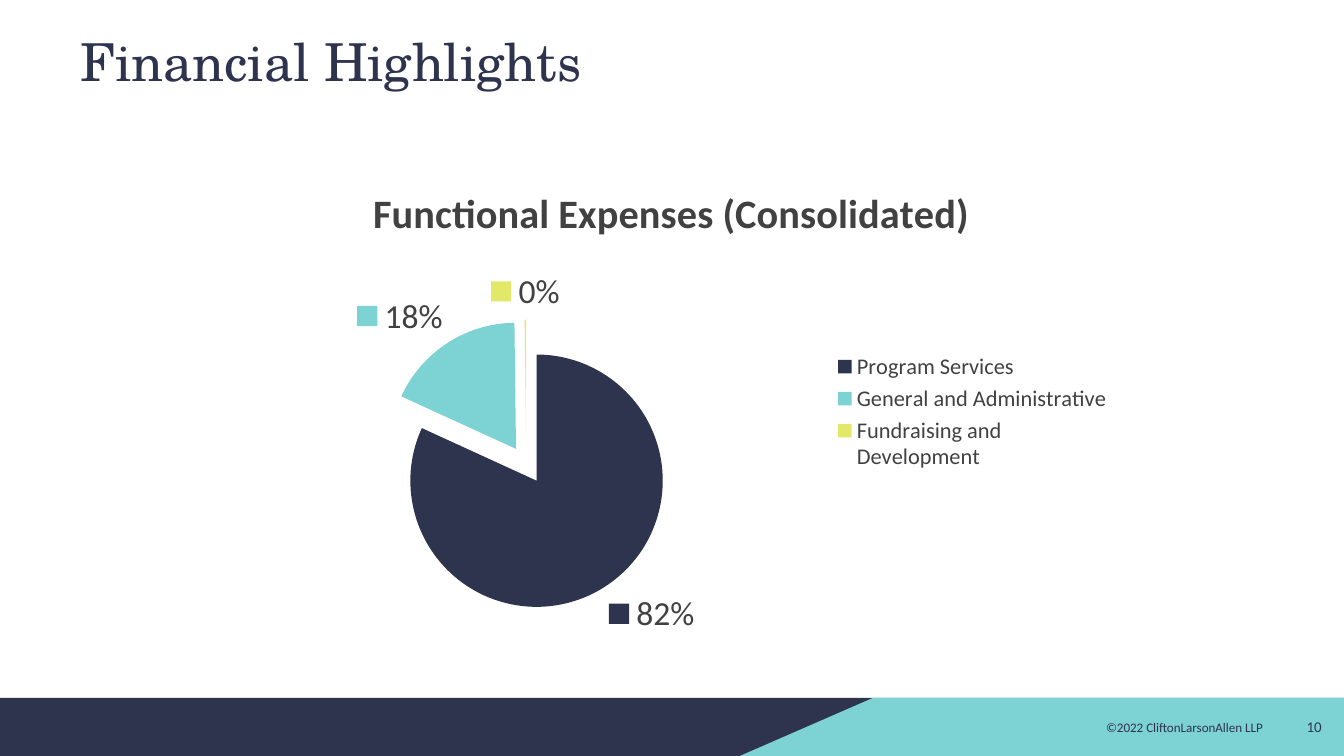
from typing import NamedTuple

from lxml import etree
from pptx import Presentation
from pptx.chart.data import CategoryChartData
from pptx.dml.color import RGBColor
from pptx.enum.chart import XL_CHART_TYPE, XL_LABEL_POSITION, XL_LEGEND_POSITION
from pptx.enum.shapes import MSO_SHAPE
from pptx.enum.text import MSO_ANCHOR, PP_ALIGN
from pptx.oxml.ns import qn
from pptx.util import Emu, Pt

PIE = XL_CHART_TYPE.PIE
OUTSIDE = XL_LABEL_POSITION.OUTSIDE_END
RIGHT_SIDE = XL_LEGEND_POSITION.RIGHT
RECT = MSO_SHAPE.RECTANGLE
MIDDLE = MSO_ANCHOR.MIDDLE
LEFT, RIGHT = PP_ALIGN.LEFT, PP_ALIGN.RIGHT

SCALE = 914400 / 134.4  # EMU in one px
WIDTH, HEIGHT = 1344, 756
BAND = 698  # top of the footer band

NAVY, TEAL, LIME, GREY = "2E334E", "7DD2D3", "E2E868", "414142"
SANS, SERIF = "Calibri", "TeX Gyre Schola"


class Box(NamedTuple):
    left: int
    top: int
    width: int
    height: int


class Slice(NamedTuple):
    name: str
    value: float
    color: str


class Note(NamedTuple):
    text: str
    box: Box
    size: int


SLICES = [
    Slice("Program Services", 0.82, NAVY),
    Slice("General and Administrative", 0.18, TEAL),
    Slice("Fundraising and Development", 0.002, LIME),
]
NOTES = [
    Note("©2022 CliftonLarsonAllen LLP", Box(1015, 704, 261, 46), 7),
    Note("10", Box(1277, 701, 58, 51), 8),
]


def px(n: int) -> Emu:
    return Emu(round(n * SCALE))


def spot(box: Box) -> list[Emu]:
    return [px(n) for n in box]


def rgb(code: str) -> RGBColor:
    return RGBColor.from_string(code)


def style(font, size: float, color: str, face: str = SANS, bold: bool = False) -> None:
    font.size, font.name, font.bold = Pt(size), face, bold
    font.color.rgb = rgb(color)


def write(shape, text: str, *, size: int, color: str = NAVY,
          face: str = SANS, align=LEFT) -> None:
    frame = shape.text_frame
    frame.text = text
    frame.word_wrap = True
    frame.vertical_anchor = MIDDLE
    line = frame.paragraphs[0]
    line.alignment = align
    style(line.runs[0].font, size, color, face)


def paint(shape, color: str) -> None:
    shape.shadow.inherit = False
    shape.fill.solid()
    shape.fill.fore_color.rgb = rgb(color)
    shape.line.fill.background()


def place(plot_area, **marks: float) -> None:
    """Set the manual layout of the plot, in fractions of the chart."""
    layout = plot_area.find(qn("c:layout"))
    if layout is None:
        layout = etree.Element(qn("c:layout"))
        plot_area.insert(0, layout)
    manual = etree.SubElement(layout, qn("c:manualLayout"))
    etree.SubElement(manual, qn("c:layoutTarget")).set("val", "inner")
    for axis in "xy":
        etree.SubElement(manual, qn(f"c:{axis}Mode")).set("val", "edge")
    for key, value in marks.items():
        etree.SubElement(manual, qn(f"c:{key}")).set("val", str(value))


def explode(series, share: int) -> None:
    """Pull every slice out by a percentage of the radius."""
    node = etree.Element(qn("c:explosion"))
    node.set("val", str(share))
    series._element.find(qn("c:tx")).addnext(node)


def draw_footer(slide) -> None:
    band = slide.shapes.add_shape(RECT, *spot(Box(0, BAND, WIDTH, HEIGHT - BAND)))
    paint(band, NAVY)
    pen = slide.shapes.build_freeform(873, BAND, scale=SCALE)
    pen.add_line_segments([(WIDTH, BAND), (WIDTH, HEIGHT), (740, HEIGHT)])
    paint(pen.convert_to_shape(), TEAL)
    for note in NOTES:
        box = slide.shapes.add_textbox(*spot(note.box))
        write(box, note.text, size=note.size, align=RIGHT)


def draw_chart(slide, box: Box) -> None:
    data = CategoryChartData(number_format="0%")
    data.categories = [part.name for part in SLICES]
    data.add_series("Series 1", [part.value for part in SLICES])
    chart = slide.shapes.add_chart(PIE, *spot(box), data).chart
    style(chart.font, 18, GREY)

    title = chart.chart_title
    title.include_in_layout = False
    title.text_frame.text = "Functional Expenses (Consolidated)"
    style(title.text_frame.paragraphs[0].runs[0].font, 21.6, GREY, bold=True)
    place(chart.element.find(".//" + qn("c:plotArea")), x=0.18, y=0.31, w=0.32, h=0.59)

    chart.has_legend = True
    chart.legend.position = RIGHT_SIDE
    chart.legend.include_in_layout = False
    style(chart.legend.font, 12, GREY)

    plot = chart.plots[0]
    plot.vary_by_categories = True
    plot.has_data_labels = True
    labels = plot.data_labels
    labels.show_value = labels.show_legend_key = True
    labels.show_percentage = False
    labels.number_format, labels.number_format_is_linked = "0%", False
    labels.position = OUTSIDE
    style(labels.font, 18, GREY)

    series = plot.series[0]
    explode(series, 15)
    for i, part in enumerate(SLICES):
        fill = series.points[i].format.fill
        fill.solid()
        fill.fore_color.rgb = rgb(part.color)


def main() -> None:
    deck = Presentation()
    deck.slide_width, deck.slide_height = px(WIDTH), px(HEIGHT)
    slide = deck.slides.add_slide(deck.slide_layouts[5])
    draw_footer(slide)
    title = slide.shapes.title
    title.left, title.top, title.width, title.height = spot(Box(67, 10, 1210, 101))
    write(title, "Financial Highlights", size=28, face=SERIF)
    draw_chart(slide, Box(218, 160, 907, 504))
    deck.save("out.pptx")


if __name__ == "__main__":
    main()
